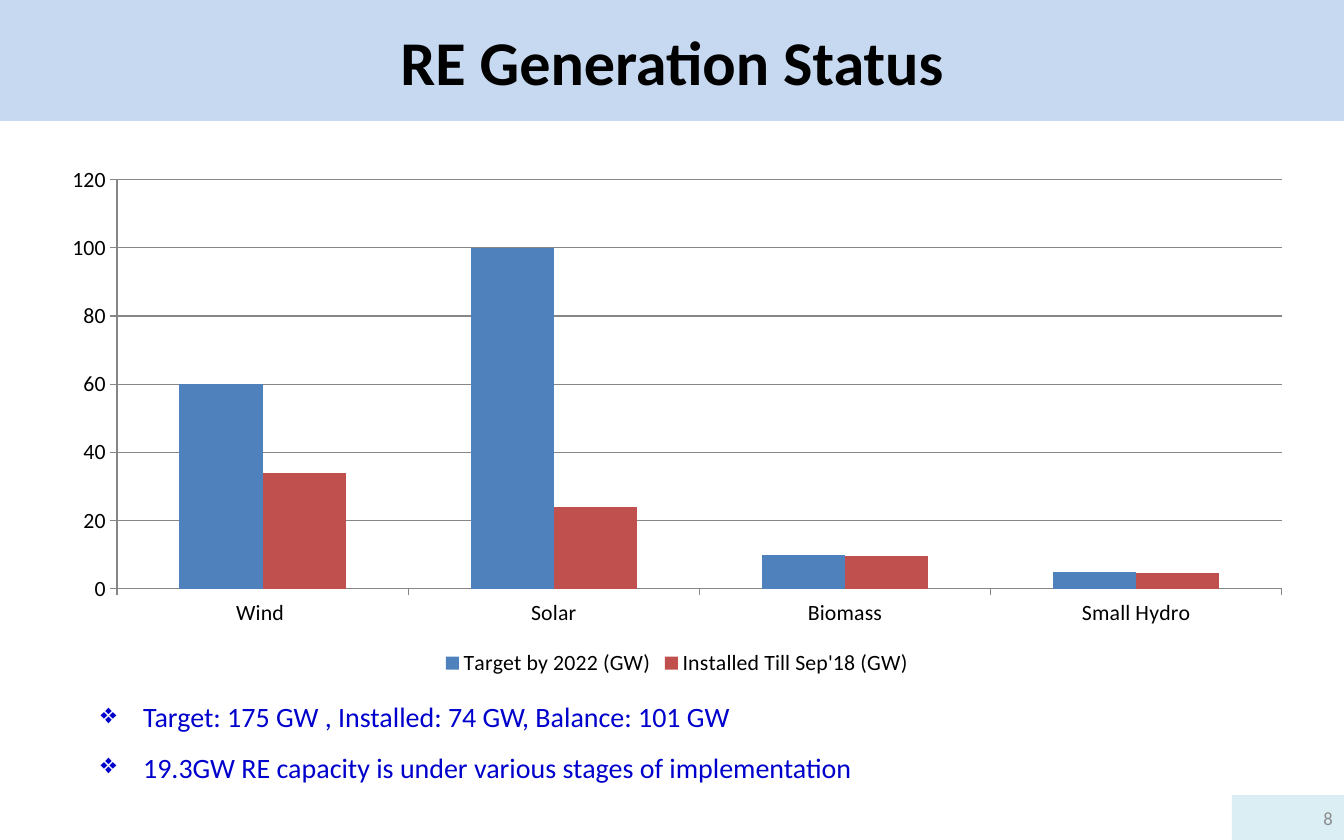
from lxml import etree
from pptx import Presentation
from pptx import util as u
from pptx.chart.data import CategoryChartData
from pptx.dml.color import RGBColor
from pptx.enum import chart as ch, shapes, text
from pptx.oxml.ns import qn

COLORS = {"band": "C6D9F1", "corner": "DBEEF4", "title": "000000", "number": "8C8C8C",
          "bullet": "0000CC", "axis": "868686", "target": "4F81BD", "installed": "C0504D"}
FONT = "Calibri"

prs = Presentation()
prs.slide_width, prs.slide_height = u.Inches(12), u.Inches(7.5)
W, H = prs.slide_width, prs.slide_height
slide = prs.slides.add_slide(prs.slide_layouts[6])


def rgb(name):
    return RGBColor.from_string(COLORS[name])


def set_font(font, size, color, bold=False):
    font.name, font.size, font.bold = FONT, u.Pt(size), bold
    font.color.rgb = rgb(color)


# Page number corner and title band
row = u.Inches(0.4)
bars = [
    (W * 11 // 12, H - row, W // 12, row, "corner", "8", 12, "number", False, text.PP_ALIGN.RIGHT),
    (0, 0, W, u.Inches(1.08), "band", "RE Generation Status", 40, "title", True, text.PP_ALIGN.CENTER),
]
for left, top, width, height, fill, words, size, color, bold, align in bars:
    sp = slide.shapes.add_shape(shapes.MSO_SHAPE.RECTANGLE, left, top, width, height)
    sp.shadow.inherit = False
    sp.fill.solid()
    sp.fill.fore_color.rgb = rgb(fill)
    sp.line.fill.background()
    tf = sp.text_frame
    tf.vertical_anchor = text.MSO_ANCHOR.MIDDLE
    p = tf.paragraphs[0]
    p.text, p.alignment = words, align
    set_font(p.font, size, color, bold)

# Summary bullets
sp = slide.shapes.add_textbox(W // 15, u.Inches(6.05), W * 13 // 15, u.Inches(1.01))
tf = sp.text_frame
tf.word_wrap = True
tf.auto_size = text.MSO_AUTO_SIZE.SHAPE_TO_FIT_TEXT
facts = ["Target: 175 GW , Installed: 74 GW, Balance: 101 GW",
         "19.3GW RE capacity is under various stages of implementation"]
for i, fact in enumerate(facts):
    p = tf.add_paragraph() if i else tf.paragraphs[0]
    p.text, p.line_spacing = fact, 1.5
    set_font(p.font, 18, "bullet")
    pPr = p._p.get_or_add_pPr()
    indent = u.Inches(0.38)
    pPr.set("marL", str(indent))
    pPr.set("indent", str(-indent))
    bullet = etree.Element(qn("a:buChar"), char="❖")
    pPr.find(qn("a:defRPr")).addprevious(bullet)

# Target against installed capacity
data = CategoryChartData()
data.categories = ["Wind ", "Solar", "Biomass", "Small Hydro"]
data.add_series("Target by 2022 (GW)", (60, 100, 10, 5))
data.add_series("Installed Till Sep'18 (GW)", (34, 24, 9.5, 4.5))
chart = slide.shapes.add_chart(
    ch.XL_CHART_TYPE.COLUMN_CLUSTERED, u.Inches(0.42), u.Inches(1.39),
    u.Inches(11.25), u.Inches(4.69), data).chart
set_font(chart.font, 14, "title")
chart.has_title = False
chart.has_legend = True
chart.legend.position = ch.XL_LEGEND_POSITION.BOTTOM
chart.legend.include_in_layout = False

plot = chart.plots[0]
plot.gap_width, plot.overlap, plot.vary_by_categories = 150, 0, False
for series, color in zip(plot.series, ("target", "installed")):
    series.format.fill.solid()
    series.format.fill.fore_color.rgb = rgb(color)

values = chart.value_axis
values.minimum_scale, values.maximum_scale, values.major_unit = 0, 120, 20
values.has_major_gridlines = True
chart.category_axis.has_major_gridlines = False
for axis in (chart.category_axis, values):
    axis.major_tick_mark = ch.XL_TICK_MARK.OUTSIDE
    axis.minor_tick_mark = ch.XL_TICK_MARK.NONE
for item in (chart.category_axis, values, values.major_gridlines):
    item.format.line.color.rgb = rgb("axis")
    item.format.line.width = u.Pt(0.75)

prs.save("out.pptx")
